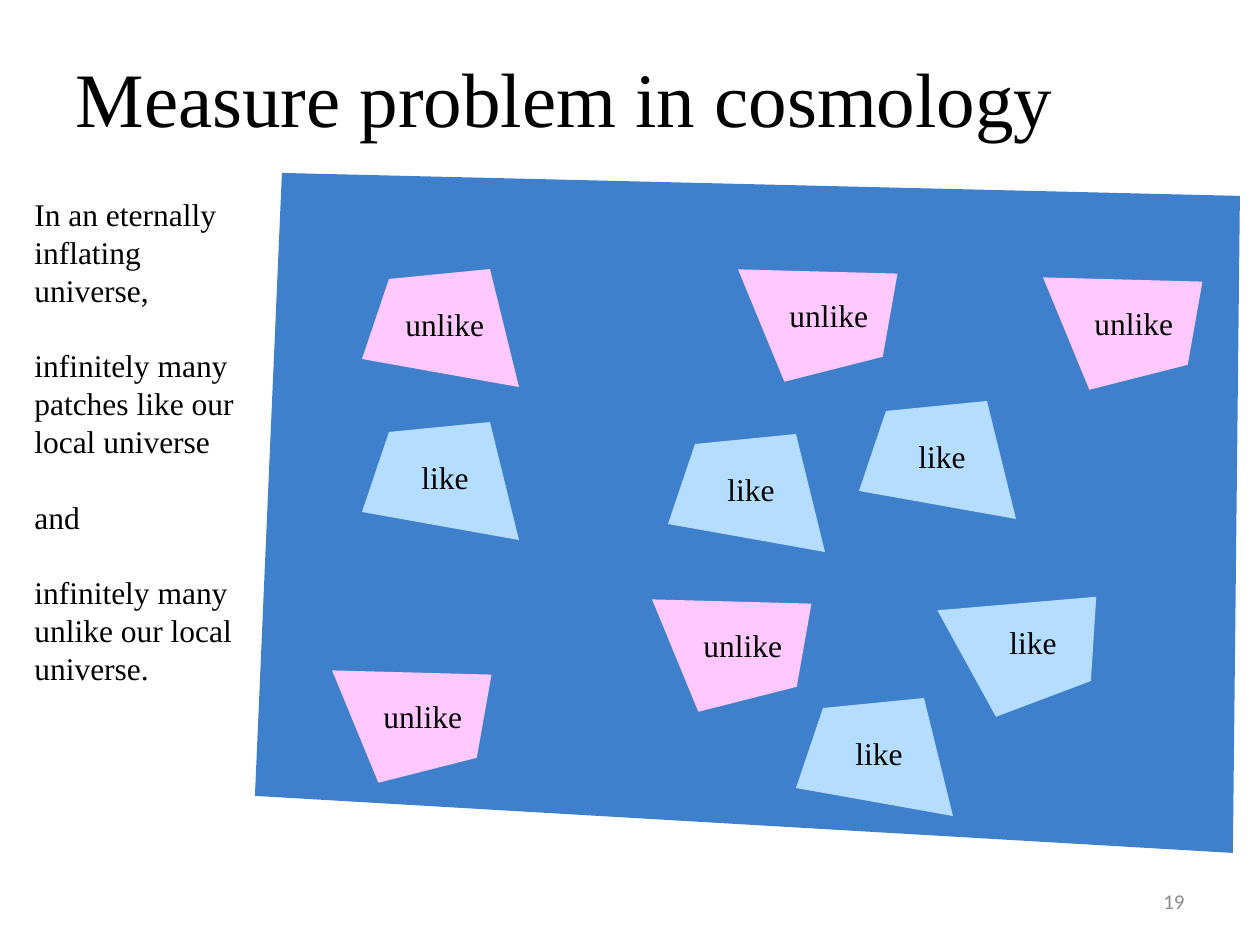
import pptx
import pptx.dml.color
import pptx.enum.text
import pptx.util

EMU_PER_PX = 914400 // 126
COLORS = {
    "text": "000000",
    "number": "8C8C8C",
    "universe": "3F80CD",
    "like": "B4DDFF",
    "unlike": "FFC8FF",
}
SERIF = "Times New Roman"
ALIGN = pptx.enum.text.PP_ALIGN
ANCHOR = pptx.enum.text.MSO_ANCHOR

UNIVERSE = [(282, 173), (1240, 196), (1233, 853), (255, 796)]
PATCH = [(27, 10), (128, 0), (157, 118), (0, 90)]
LABEL_WIDTH = {"like": 73, "unlike": 105}
LABEL_CENTER = 83
LABEL_TOP = {0: 30, 165: 29, 171.4: 33}

# kind, left, top, rotation
PATCHES = [
    ("like", 859, 401, 0),
    ("unlike", 340, 658, 171.4),
    ("unlike", 362, 269, 0),
    ("unlike", 746, 257, 171.4),
    ("like", 950, 588, 165),
    ("unlike", 660, 587, 171.4),
    ("like", 362, 422, 0),
    ("like", 796, 698, 0),
    ("unlike", 1051, 265, 171.4),
    ("like", 668, 434, 0),
]
STORY = [
    "In an eternally inflating universe,",
    "infinitely many patches like our local universe",
    "and",
    "infinitely many unlike our local universe.",
]


def px(n):
    return pptx.util.Emu(n * EMU_PER_PX)


def rgb(name):
    return pptx.dml.color.RGBColor.from_string(COLORS[name])


def write(sp, *paragraphs, size=18, font=SERIF, color="text",
          align=ALIGN.LEFT, anchor=ANCHOR.TOP, wrap=True, gap=0):
    """Fill a shape with paragraphs, gap points apart."""
    tf = sp.text_frame
    tf.word_wrap = wrap
    tf.auto_size = pptx.enum.text.MSO_AUTO_SIZE.NONE
    tf.vertical_anchor = anchor
    for i, text in enumerate(paragraphs):
        p = tf.add_paragraph() if i else tf.paragraphs[0]
        p.alignment = align
        p.space_before = pptx.util.Pt(gap if i else 0)
        r = p.add_run()
        r.text = text
        r.font.size = pptx.util.Pt(size)
        r.font.name = font
        r.font.color.rgb = rgb(color)


def add_text(shapes, box, *paragraphs, **fmt):
    sp = shapes.add_textbox(*map(px, box))
    write(sp, *paragraphs, **fmt)


def add_title(s, box, text):
    sp = s.shapes.title
    sp.left, sp.top, sp.width, sp.height = map(px, box)
    write(sp, text, size=44, anchor=ANCHOR.MIDDLE)


def add_polygon(shapes, points, color):
    builder = shapes.build_freeform(*points[0], scale=EMU_PER_PX)
    builder.add_line_segments(points[1:], close=True)
    sp = builder.convert_to_shape()
    sp.shadow.inherit = False
    sp.fill.solid()
    sp.fill.fore_color.rgb = rgb(color)
    sp.line.fill.background()
    return sp


def add_patch(s, kind, left, top, rotation):
    """Group a turned quadrilateral with its upright label."""
    shapes = s.shapes.add_group_shape().shapes
    sp = add_polygon(shapes, [(left + x, top + y) for x, y in PATCH], kind)
    sp.rotation = rotation
    width = LABEL_WIDTH[kind]
    label_left = left + LABEL_CENTER - width // 2
    add_text(shapes, (label_left, top + LABEL_TOP[rotation], width, 50),
             kind, wrap=False)


def main():
    prs = pptx.Presentation()
    prs.slide_width, prs.slide_height = px(1260), px(945)
    s = prs.slides.add_slide(prs.slide_layouts[5])
    add_title(s, (63, 38, 1055, 118), "Measure problem in cosmology")
    add_text(s.shapes, (903, 876, 294, 50), "19", size=12, font="Calibri",
             color="number", align=ALIGN.RIGHT, anchor=ANCHOR.MIDDLE)
    add_polygon(s.shapes, UNIVERSE, "universe")
    add_text(s.shapes, (22, 189, 233, 509), *STORY, gap=21.6)
    for patch in PATCHES:
        add_patch(s, *patch)
    prs.save("out.pptx")


if __name__ == "__main__":
    main()
